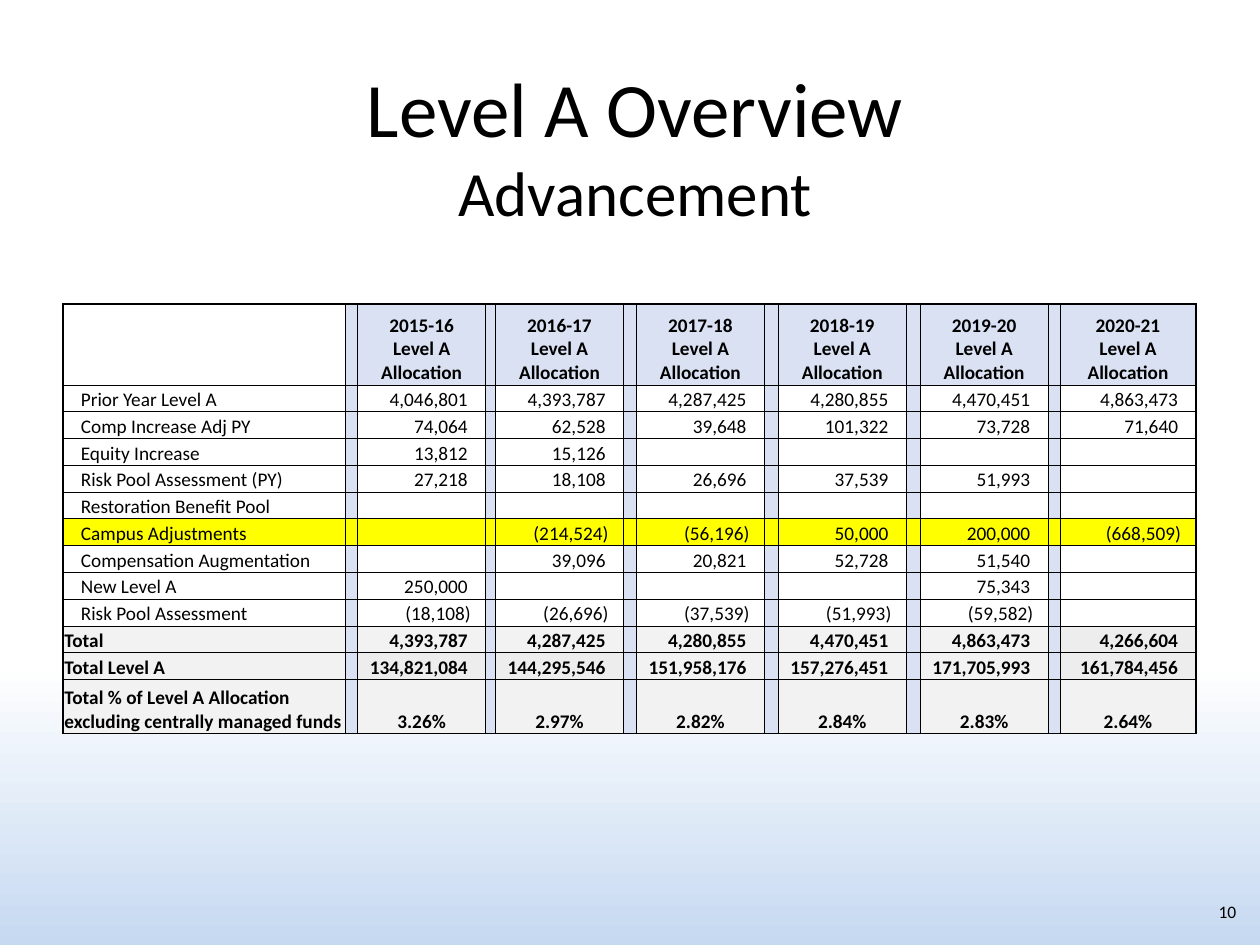
from lxml.etree import SubElement
from pptx import Presentation
from pptx.dml.color import RGBColor
from pptx.enum.text import MSO_ANCHOR as Anchor, PP_ALIGN as Align
from pptx.oxml import parse_xml
from pptx.oxml.ns import nsdecls, qn
from pptx.util import Cm, Pt

FONT = "Calibri"
BLACK, WHITE = "000000", "FFFFFF"
BLUE, YELLOW = "D9E1F2", "FFFF00"
GREY, DARK_GREY = "F2F2F2", "EDEDED"

YEARS = ["2015-16", "2016-17", "2017-18", "2018-19", "2019-20", "2020-21"]
ROWS = [
    ("Prior Year Level A", "4,046,801", "4,393,787", "4,287,425", "4,280,855", "4,470,451", "4,863,473"),
    ("Comp Increase Adj PY", "74,064", "62,528", "39,648", "101,322", "73,728", "71,640"),
    ("Equity Increase", "13,812", "15,126", "", "", "", ""),
    ("Risk Pool Assessment (PY)", "27,218", "18,108", "26,696", "37,539", "51,993", ""),
    ("Restoration Benefit Pool", "", "", "", "", "", ""),
    ("Campus Adjustments", "", "(214,524)", "(56,196)", "50,000", "200,000", "(668,509)"),
    ("Compensation Augmentation", "", "39,096", "20,821", "52,728", "51,540", ""),
    ("New Level A", "250,000", "", "", "", "75,343", ""),
    ("Risk Pool Assessment", "(18,108)", "(26,696)", "(37,539)", "(51,993)", "(59,582)", ""),
    ("Total", "4,393,787", "4,287,425", "4,280,855", "4,470,451", "4,863,473", "4,266,604"),
    ("Total Level A", "134,821,084", "144,295,546", "151,958,176", "157,276,451", "171,705,993", "161,784,456"),
    ("Total % of Level A Allocation excluding centrally managed funds",
     "3.26%", "2.97%", "2.82%", "2.84%", "2.83%", "2.64%"),
]
GAP_WIDTHS = [0.24, 0.2, 0.26, 0.28, 0.28, 0.24]
LABEL_WIDTH, VALUE_WIDTH, LAST_VALUE_WIDTH = 5.7, 2.58, 2.74
HEADER_HEIGHT, ROW_HEIGHT, PERCENT_HEIGHT = 1.63, 0.54, 1.09
HIGHLIGHT_ROW, TOTAL_ROW, PERCENT_ROW = 6, 10, 12
DARKER_CELLS = {(10, 12), (11, 2), (11, 4), (11, 12)}


def color(value):
    return RGBColor.from_string(value)


def format_run(run, size, bold=False):
    run.font.name = FONT
    run.font.size = Pt(size)
    run.font.bold = bold
    run.font.color.rgb = color(BLACK)


def add_text(slide, box, text, sizes, alignment):
    """Add one paragraph whose runs take the given sizes in turn."""
    shape = slide.shapes.add_textbox(*(Cm(length) for length in box))
    frame = shape.text_frame
    frame.word_wrap = True
    frame.text = text
    paragraph = frame.paragraphs[0]
    paragraph.alignment = alignment
    for run, size in zip(paragraph.runs, sizes):
        format_run(run, size)


def set_background(slide):
    fill = slide.background.fill
    fill.gradient()
    fill.gradient_angle = 270
    for stop, position, value in zip(fill.gradient_stops, (0.7, 1), (WHITE, "C6D9F1")):
        stop.position = position
        stop.color.rgb = color(value)


def set_borders(cell, outer_sides):
    """Draw thin borders, with thicker ones where the cell meets the table edge."""
    properties = cell._tc.get_or_add_tcPr()
    for index, side in enumerate("LRTB"):
        width = Pt(1 if side in outer_sides else 0.5)
        properties.insert(index, parse_xml(
            f'<a:ln{side} {nsdecls("a")} w="{width}"><a:solidFill>'
            f'<a:srgbClr val="{BLACK}"/></a:solidFill></a:ln{side}>'))


def cell_fill(row, column):
    if row == HIGHLIGHT_ROW:
        return YELLOW
    if column % 2 or (row == 0 and column > 0):
        return BLUE
    if (row, column) in DARKER_CELLS:
        return DARK_GREY
    return GREY if row >= TOTAL_ROW else None


def cell_text(row, column):
    if column % 2:
        return ""
    if row == 0:
        return f"{YEARS[column // 2 - 1]}\nLevel A Allocation" if column else ""
    return ROWS[row - 1][column // 2]


def place_text(cell, row, column):
    text = cell_text(row, column)
    cell.text = text
    cell.vertical_anchor = Anchor.BOTTOM
    cell.margin_left = cell.margin_right = cell.margin_top = Cm(0.03)
    cell.margin_bottom = 0
    alignment = Align.LEFT
    if row in (0, PERCENT_ROW) and column:
        alignment = Align.CENTER
    elif column == 0 and 0 < row < TOTAL_ROW:
        cell.margin_left = Cm(0.36)
    elif column and text:
        alignment = Align.RIGHT
        cell.margin_right = Cm(0.3 if text.endswith(")") else 0.36)
    for paragraph in cell.text_frame.paragraphs:
        paragraph.alignment = alignment
        for run in paragraph.runs:
            format_run(run, 11, bold=row == 0 or row >= TOTAL_ROW)
        if not text:
            SubElement(paragraph._p, qn("a:endParaRPr"), sz="1100")


def add_allocation_table(slide, left, top):
    widths = [LABEL_WIDTH]
    for gap in GAP_WIDTHS:
        widths += [gap, VALUE_WIDTH]
    widths[-1] = LAST_VALUE_WIDTH
    heights = [HEADER_HEIGHT] + [ROW_HEIGHT] * (len(ROWS) - 1) + [PERCENT_HEIGHT]
    table = slide.shapes.add_table(
        len(heights), len(widths), Cm(left), Cm(top), Cm(sum(widths)), Cm(sum(heights))).table
    table.first_row = table.horz_banding = False
    for column, width in zip(table.columns, widths):
        column.width = Cm(width)
    for row, height in zip(table.rows, heights):
        row.height = Cm(height)

    last_row, last_column = len(heights) - 1, len(widths) - 1
    for row in range(len(heights)):
        for column in range(len(widths)):
            cell = table.cell(row, column)
            place_text(cell, row, column)
            edges = {"L": column == 0, "R": column == last_column,
                     "T": row == 0, "B": row == last_row}
            set_borders(cell, [side for side, outer in edges.items() if outer])
            value = cell_fill(row, column)
            if value:
                cell.fill.solid()
                cell.fill.fore_color.rgb = color(value)
            else:
                cell.fill.background()


def main():
    presentation = Presentation()
    presentation.slide_width, presentation.slide_height = Cm(25.4), Cm(19.05)
    slide = presentation.slides.add_slide(presentation.slide_layouts[6])
    set_background(slide)
    add_text(slide, (0.84, 1.1, 23.93, 3.7), "Level A Overview\vAdvancement", (44, 36), Align.CENTER)
    add_text(slide, (19.25, 18.03, 5.92, 1.02), "10", (10,), Align.RIGHT)
    add_allocation_table(slide, 1.27, 6.13)
    presentation.save("out.pptx")


if __name__ == "__main__":
    main()
